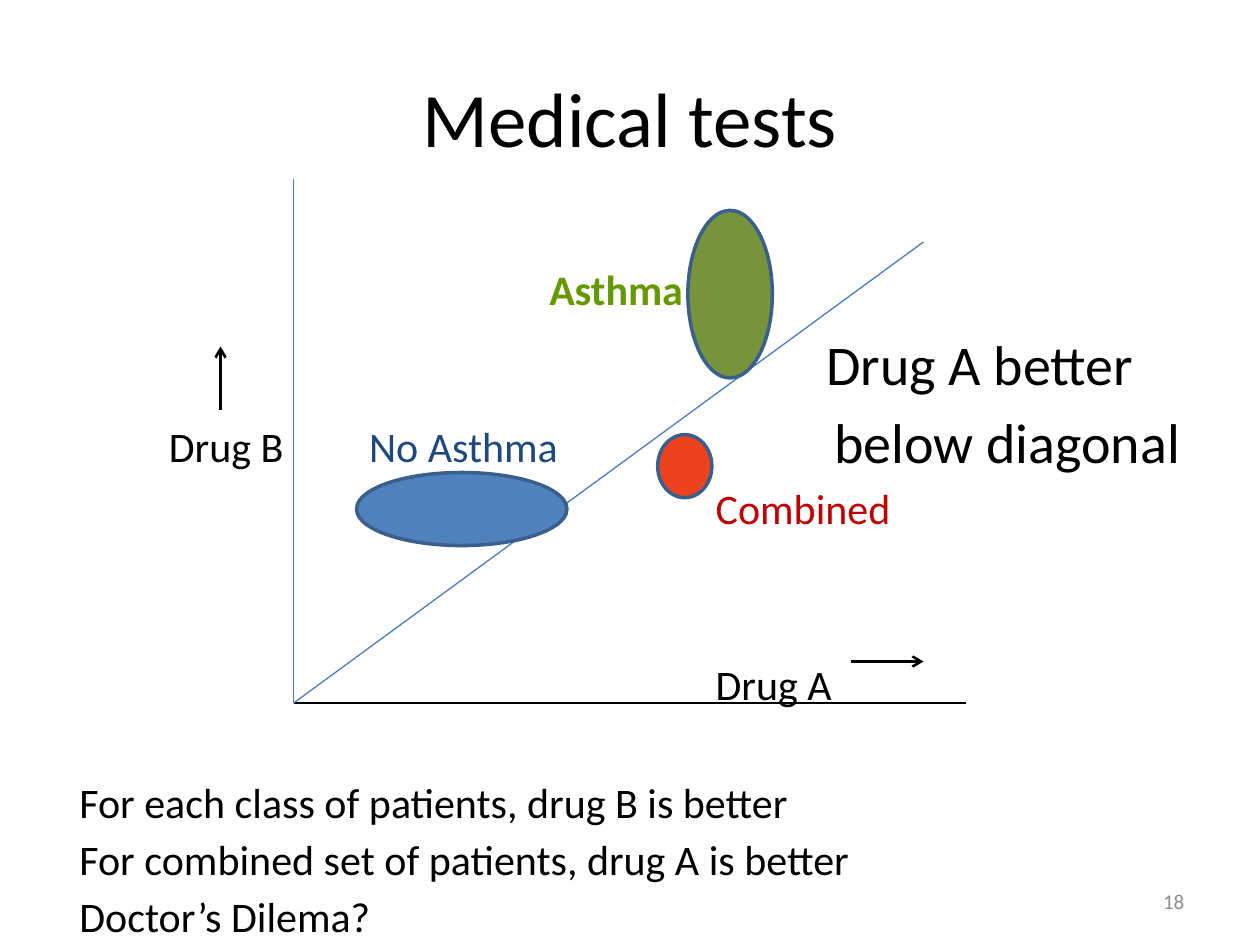
from lxml.etree import SubElement
from pptx import Presentation
from pptx.dml.color import RGBColor
from pptx.enum.shapes import MSO_CONNECTOR, MSO_SHAPE
from pptx.enum.text import MSO_ANCHOR, MSO_AUTO_SIZE, PP_ALIGN
from pptx.oxml.ns import qn
from pptx.util import Inches, Pt

THEME = {
    "font": "Calibri",
    "title": 44, "large": 32, "normal": 24, "small": 12,
    "black": "000000", "grey": "8C8C8C", "axis": "4B7EBC", "outline": "3A5F8C",
    "navy": "1F497D", "leaf": "669900", "crimson": "C00000",
    "blue": "4F81BD", "red": "EE411E", "olive": "77933C",
}

# Content
TITLE = "Medical tests"
CONCLUSIONS = [
    "For each class of patients, drug B is better",
    "For combined set of patients, drug A is better",
    "Doctor’s Dilema?",
]
SLIDE_NUMBER = "18"
ORIGIN = (2.33, 5.58)
# text, left, vertical centre, width, size, colour, bold
LABELS = [
    ("Asthma", 4.36, 2.29, 1.3, "normal", "leaf", True),
    ("Drug A better", 6.56, 2.88, 3, "large", "black", False),
    ("Drug B", 1.34, 3.54, 1.2, "normal", "black", False),
    ("No Asthma", 2.93, 3.54, 2, "normal", "navy", False),
    ("below diagonal", 6.62, 3.5, 3, "large", "black", False),
    ("Combined", 5.68, 4.03, 2, "normal", "crimson", False),
    ("Drug A", 5.68, 5.43, 1.2, "normal", "black", False),
]
# start, end, colour, width, arrow
LINES = [
    ((2.33, 1.42), ORIGIN, "axis", 0.75, False),
    (ORIGIN, (7.67, 5.58), "black", 0.75, False),
    (ORIGIN, (7.33, 1.92), "axis", 0.75, False),
    ((6.75, 5.25), (7.33, 5.25), "black", 1.5, True),
    ((1.75, 3.25), (1.75, 2.75), "black", 1.5, True),
]
# left, top, width, height, fill
GROUPS = [
    (2.83, 3.75, 1.67, 0.58, "blue"),
    (5.22, 3.45, 0.43, 0.5, "red"),
    (5.46, 1.67, 0.67, 1.33, "olive"),
]


def color(name):
    return RGBColor.from_string(THEME[name])


def apply(target, **values):
    for name, value in values.items():
        setattr(target, name, value)


def place(shape, left, top, width, height):
    apply(shape, left=Inches(left), top=Inches(top),
          width=Inches(width), height=Inches(height))


def write(paragraph, text, size, color_name="black", bold=False, align=PP_ALIGN.LEFT):
    paragraph.alignment = align
    run = paragraph.add_run()
    run.text = text
    apply(run.font, name=THEME["font"], size=Pt(THEME[size]), bold=bold)
    run.font.color.rgb = color(color_name)


def add_label(slide, text, left, middle, width, size, color_name, bold=False,
              align=PP_ALIGN.LEFT):
    height = 0.6
    box = slide.shapes.add_textbox(Inches(left), Inches(middle - height / 2),
                                   Inches(width), Inches(height))
    apply(box.text_frame, word_wrap=True, vertical_anchor=MSO_ANCHOR.MIDDLE,
          margin_left=0, margin_right=0, margin_top=0, margin_bottom=0)
    write(box.text_frame.paragraphs[0], text, size, color_name, bold, align)


def add_line(slide, start, end, color_name, width, arrow):
    line = slide.shapes.add_connector(MSO_CONNECTOR.STRAIGHT,
                                      *(Inches(value) for value in start + end))
    line.line.color.rgb = color(color_name)
    line.line.width = Pt(width)
    if arrow:
        SubElement(line.line._get_or_add_ln(), qn("a:tailEnd"), type="arrow")
    SubElement(line._element.spPr, qn("a:effectLst"))


def add_group(slide, left, top, width, height, fill):
    ellipse = slide.shapes.add_shape(MSO_SHAPE.OVAL, Inches(left), Inches(top),
                                     Inches(width), Inches(height))
    ellipse.shadow.inherit = False
    ellipse.fill.solid()
    ellipse.fill.fore_color.rgb = color(fill)
    ellipse.line.color.rgb = color("outline")
    ellipse.line.width = Pt(2)


def main():
    presentation = Presentation()
    apply(presentation, slide_width=Inches(10), slide_height=Inches(7.5))
    slide = presentation.slides.add_slide(presentation.slide_layouts[1])

    # Title
    title = slide.shapes.title
    place(title, 0.5, 0.3, 9, 1.25)
    title.text_frame.vertical_anchor = MSO_ANCHOR.MIDDLE
    write(title.text_frame.paragraphs[0], TITLE, "title", align=PP_ALIGN.CENTER)

    # Conclusions below the diagram
    body = slide.placeholders[1]
    place(body, 0.53, 6.16, 9, 1.34)
    frame = body.text_frame
    apply(frame, word_wrap=True, auto_size=MSO_AUTO_SIZE.NONE,
          vertical_anchor=MSO_ANCHOR.TOP, margin_top=0, margin_bottom=0)
    for index, text in enumerate(CONCLUSIONS):
        paragraph = frame.add_paragraph() if index else frame.paragraphs[0]
        apply(paragraph, space_before=Pt(0), space_after=Pt(4))
        properties = paragraph._p.get_or_add_pPr()
        properties.set("marL", "0")
        properties.set("indent", "0")
        SubElement(properties, qn("a:buNone"))
        write(paragraph, text, "normal")

    # Diagram
    for label in LABELS:
        add_label(slide, *label)
    for line in LINES:
        add_line(slide, *line)
    for group in GROUPS:
        add_group(slide, *group)

    # Slide number
    add_label(slide, SLIDE_NUMBER, 7.17, 7.15, 2.23, "small", "grey",
              align=PP_ALIGN.RIGHT)

    presentation.save("out.pptx")


if __name__ == "__main__":
    main()
